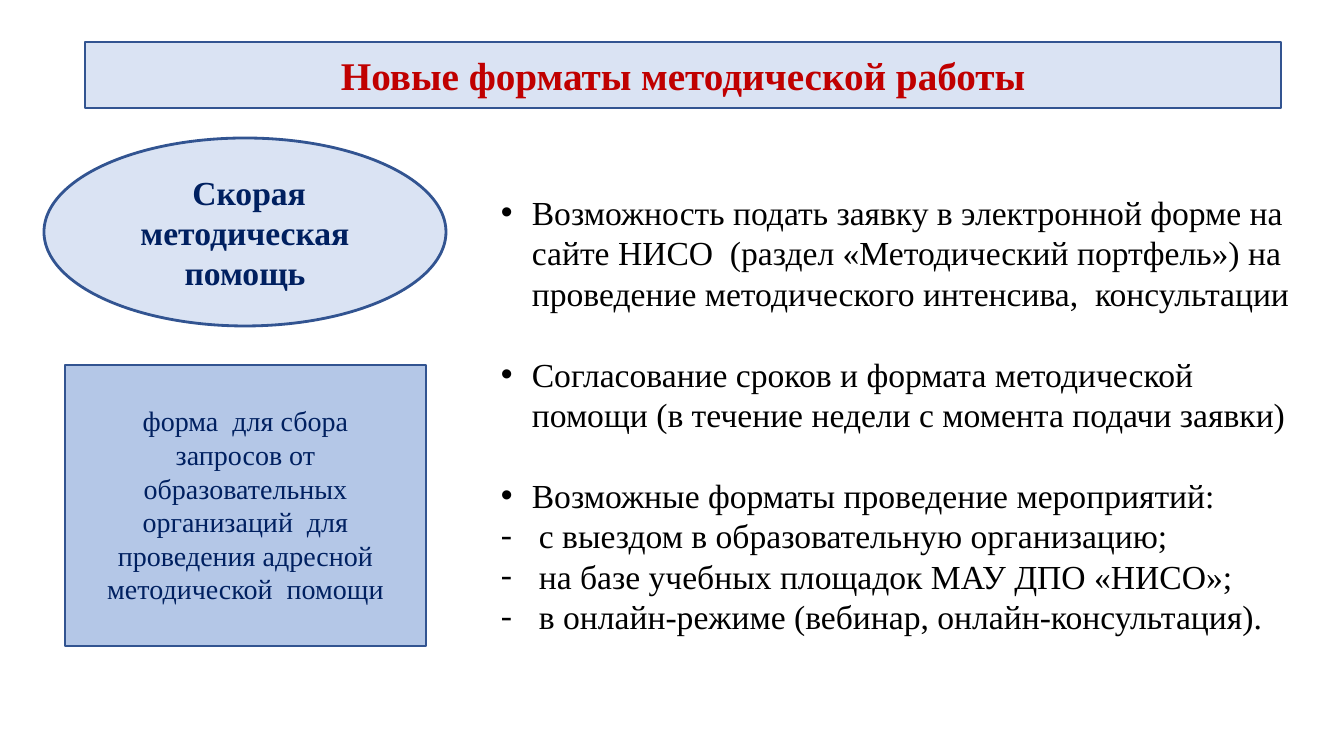
import pptx
import pptx.dml.color
import pptx.enum.shapes
import pptx.enum.text
import pptx.oxml
import pptx.oxml.ns
import pptx.util

RGBColor = pptx.dml.color.RGBColor
PALE_BLUE = RGBColor(0xDA, 0xE3, 0xF3)
MID_BLUE = RGBColor(0xB4, 0xC7, 0xE7)
OUTLINE = RGBColor(0x32, 0x54, 0x91)
NAVY = RGBColor(0x00, 0x20, 0x60)
RED = RGBColor(0xC0, 0x00, 0x00)
BLACK = RGBColor(0x00, 0x00, 0x00)

PX = 914400 / 100.8
SHAPES = pptx.enum.shapes.MSO_SHAPE
CENTER = pptx.enum.text.PP_ALIGN.CENTER
LEFT = pptx.enum.text.PP_ALIGN.LEFT

# Each point: bullet, its typeface, indent in px, space before in points, text
POINTS = [
    ("•", "Arial", 31, 0,
     "Возможность подать заявку в электронной форме на сайте НИСО  (раздел "
     "«Методический портфель») на проведение методического интенсива,  консультации"),
    ("•", "Arial", 31, 29,
     "Согласование сроков и формата методической помощи "
     "(в течение недели с момента подачи заявки)"),
    ("•", "Arial", 31, 29, "Возможные форматы проведение мероприятий:"),
    ("-", "Times New Roman", 38, 0, "с выездом в образовательную организацию;"),
    ("-", "Times New Roman", 38, 0, "на базе учебных площадок МАУ ДПО «НИСО»;"),
    ("-", "Times New Roman", 38, 0, "в онлайн-режиме (вебинар, онлайн-консультация)."),
]


def px(length):
    return pptx.util.Emu(round(length * PX))


class SlideBuilder:
    font = "Times New Roman"
    line_width = pptx.util.Pt(2)

    def __init__(self, slide):
        self.slide = slide

    def panel(self, kind, left, top, width, height, fill):
        shape = self.slide.shapes.add_shape(kind, *map(px, (left, top, width, height)))
        shape.shadow.inherit = False
        shape.fill.solid()
        shape.fill.fore_color.rgb = fill
        shape.line.color.rgb = OUTLINE
        shape.line.width = self.line_width
        shape.text_frame.word_wrap = True
        shape.text_frame.vertical_anchor = pptx.enum.text.MSO_ANCHOR.MIDDLE
        return shape.text_frame

    def text_box(self, left, top, width, height):
        box = self.slide.shapes.add_textbox(*map(px, (left, top, width, height)))
        box.text_frame.word_wrap = True
        return box.text_frame

    def set_text(self, para, text, size, color, bold=False, align=CENTER):
        para.text = text
        para.alignment = align
        para.font.name = self.font
        para.font.size = pptx.util.Pt(size)
        para.font.bold = bold
        para.font.color.rgb = color

    def bullet(self, para, mark, typeface, indent):
        """Give the paragraph a bullet with a hanging indent in px."""
        properties = para._p.get_or_add_pPr()
        properties.set("marL", str(px(indent)))
        properties.set("indent", str(-px(indent)))
        for tag, name, value in (("a:buFont", "typeface", typeface),
                                 ("a:buChar", "char", mark)):
            element = pptx.oxml.parse_xml(f"<{tag} {pptx.oxml.ns.nsdecls('a')}/>")
            element.set(name, value)
            properties.insert_element_before(element, "a:tabLst", "a:defRPr", "a:extLst")

    def bullet_list(self, frame, points, size, color):
        for index, (mark, typeface, indent, gap, text) in enumerate(points):
            para = frame.add_paragraph() if index else frame.paragraphs[0]
            self.set_text(para, text, size, color, align=LEFT)
            para.space_before = pptx.util.Pt(gap)
            self.bullet(para, mark, typeface, indent)


def main():
    deck = pptx.Presentation()
    deck.slide_width, deck.slide_height = px(1344), px(756)
    page = SlideBuilder(deck.slides.add_slide(deck.slide_layouts[6]))

    title = page.panel(SHAPES.RECTANGLE, 85, 42, 1196, 66, PALE_BLUE)
    page.set_text(title.paragraphs[0], "Новые форматы методической работы", 28, RED, bold=True)

    topic = page.panel(SHAPES.OVAL, 44, 138, 402, 188, PALE_BLUE)
    page.set_text(topic.paragraphs[0], " Скорая методическая помощь", 24, NAVY, bold=True)

    page.panel(SHAPES.RECTANGLE, 65, 365, 361, 281, MID_BLUE)
    request_form = page.text_box(91, 399, 309, 214)
    page.set_text(request_form.paragraphs[0],
                  "форма  для сбора запросов от образовательных организаций  для "
                  "проведения адресной методической  помощи", 20, NAVY)

    page.bullet_list(page.text_box(491, 187, 809, 460), POINTS, 24, BLACK)
    deck.save("out.pptx")


if __name__ == "__main__":
    main()
